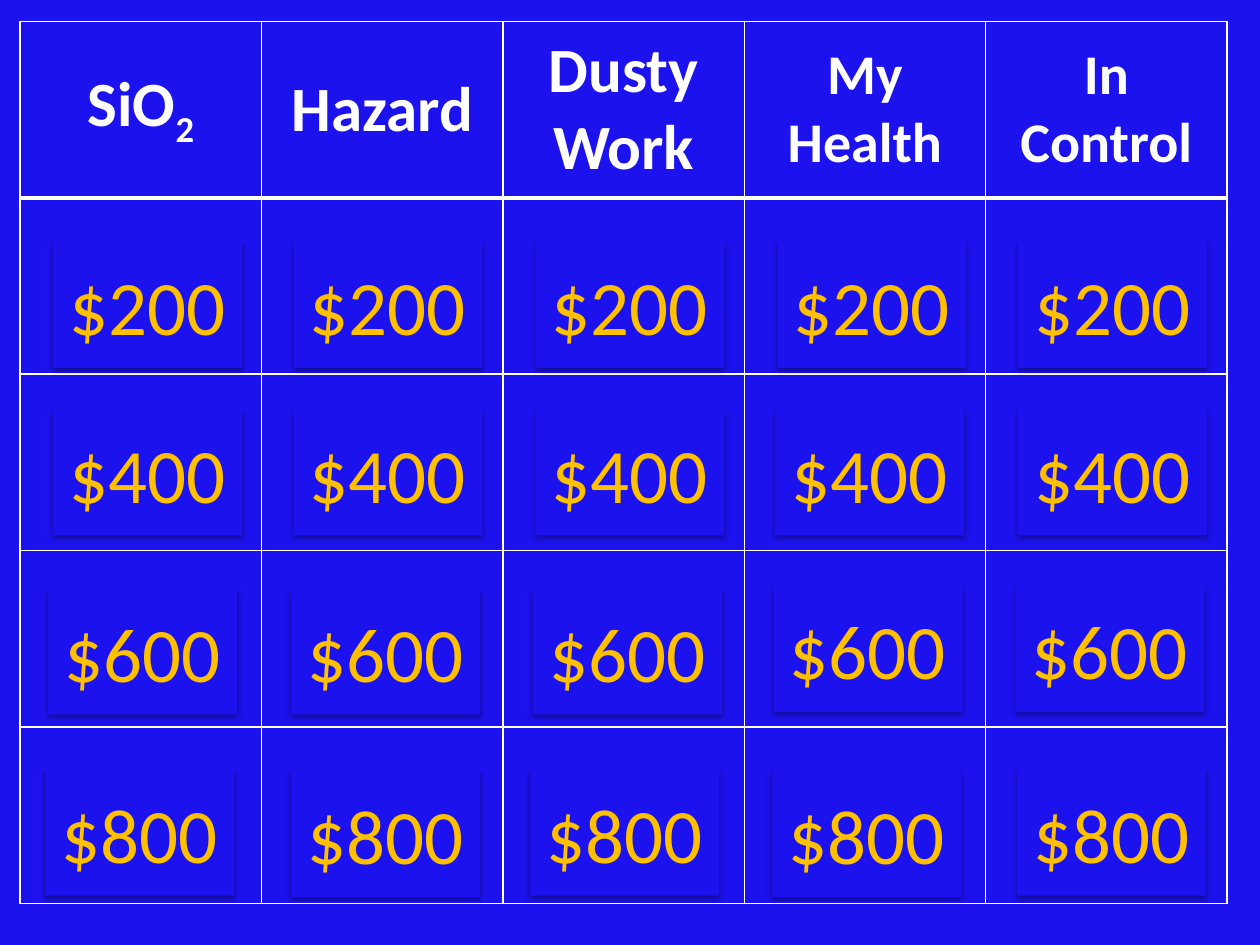
from lxml.etree import SubElement
from pptx import Presentation
from pptx.dml.color import RGBColor
from pptx.enum.shapes import MSO_SHAPE
from pptx.enum.text import MSO_ANCHOR, PP_ALIGN
from pptx.oxml.ns import qn
from pptx.util import Inches, Pt

BLUE, WHITE, GOLD = "1C12EE", "FFFFFF", "FFC000"
FONT = "Calibri"

# Each heading: text size, then paragraphs of (text, baseline percent) runs
HEADINGS = [
    (36, [[("SiO", 0), ("2", -25)]]),
    (36, [[("Hazard", 0)]]),
    (36, [[("Dusty", 0)], [("Work", 0)]]),
    (32, [[("My Health", 0)]]),
    (32, [[("In Control", 0)]]),
]
# Each prize row: label, then (left, top) of its tiles
PRIZES = [
    ("$200", [(0.42, 1.92), (2.33, 1.92), (4.25, 1.92), (6.17, 1.92), (8.08, 1.92)]),
    ("$400", [(0.42, 3.25), (2.33, 3.25), (4.25, 3.25), (6.15, 3.25), (8.08, 3.25)]),
    ("$600", [(0.38, 4.67), (2.31, 4.67), (4.23, 4.67), (6.14, 4.65), (8.06, 4.65)]),
    ("$800", [(0.36, 6.11), (2.31, 6.12), (4.21, 6.11), (6.13, 6.12), (8.07, 6.11)]),
]
BOARD = (0.16, 0.17, 9.58, 7)
TILE = (1.5, 1)


def color(value):
    return RGBColor.from_string(value)


def paint(target, value):
    target.fill.solid()
    target.fill.fore_color.rgb = color(value)


def add_run(para, text, size, value, bold=False, baseline=0):
    span = para.add_run()
    span.text = text
    span.font.name, span.font.size, span.font.bold = FONT, Pt(size), bold
    span.font.color.rgb = color(value)
    if baseline:
        span._r.get_or_add_rPr().set("baseline", str(baseline * 1000))


def add_color(parent, value):
    solid = SubElement(parent, qn("a:solidFill"))
    SubElement(solid, qn("a:srgbClr"), val=value)


def set_borders(cell, top, bottom):
    """Draw white cell borders; they must come before the fill in the XML."""
    properties = cell._tc.get_or_add_tcPr()
    widths = {"a:lnL": 1, "a:lnR": 1, "a:lnT": top, "a:lnB": bottom}
    for position, (tag, width) in enumerate(widths.items()):
        line = SubElement(properties, qn(tag), w=str(Pt(width)))
        add_color(line, WHITE)
        properties.insert(position, line)


def add_board(page):
    row_count, column_count = len(PRIZES) + 1, len(HEADINGS)
    frame = page.shapes.add_table(row_count, column_count, *map(Inches, BOARD))
    table = frame.table
    for column in table.columns:
        column.width = Inches(BOARD[2] / column_count)
    for index, row in enumerate(table.rows):
        row.height = Inches(BOARD[3] / row_count)
        for cell in row.cells:
            paint(cell, BLUE)
            set_borders(cell, 3 if index == 1 else 1, 3 if index == 0 else 1)
    for cell, (size, lines) in zip(table.rows[0].cells, HEADINGS):
        cell.vertical_anchor = MSO_ANCHOR.MIDDLE
        for index, runs in enumerate(lines):
            text = cell.text_frame
            para = text.add_paragraph() if index else text.paragraphs[0]
            para.alignment = PP_ALIGN.CENTER
            for words, baseline in runs:
                add_run(para, words, size, WHITE, True, baseline)


def add_shadow(shape):
    shape.shadow.inherit = False
    effects = shape._element.spPr.find(qn("a:effectLst"))
    shadow = SubElement(effects, qn("a:outerShdw"), blurRad=str(Pt(3.1)),
                        dist=str(Pt(1.8)), dir="5400000", rotWithShape="0")
    tint = SubElement(shadow, qn("a:srgbClr"), val="000000")
    SubElement(tint, qn("a:alpha"), val="35000")


def add_tile(page, label, left, top):
    tile = page.shapes.add_shape(MSO_SHAPE.RECTANGLE, *map(Inches, (left, top, *TILE)))
    paint(tile, BLUE)
    tile.line.fill.background()
    add_shadow(tile)
    tile.text_frame.word_wrap = True
    tile.text_frame.vertical_anchor = MSO_ANCHOR.MIDDLE
    para = tile.text_frame.paragraphs[0]
    para.alignment = PP_ALIGN.CENTER
    add_run(para, label, 44, GOLD)


def main():
    deck = Presentation()
    deck.slide_width, deck.slide_height = Inches(10), Inches(7.5)
    page = deck.slides.add_slide(deck.slide_layouts[6])
    paint(page.background, BLUE)
    add_board(page)
    for label, places in PRIZES:
        for left, top in places:
            add_tile(page, label, left, top)
    deck.save("out.pptx")


if __name__ == "__main__":
    main()
